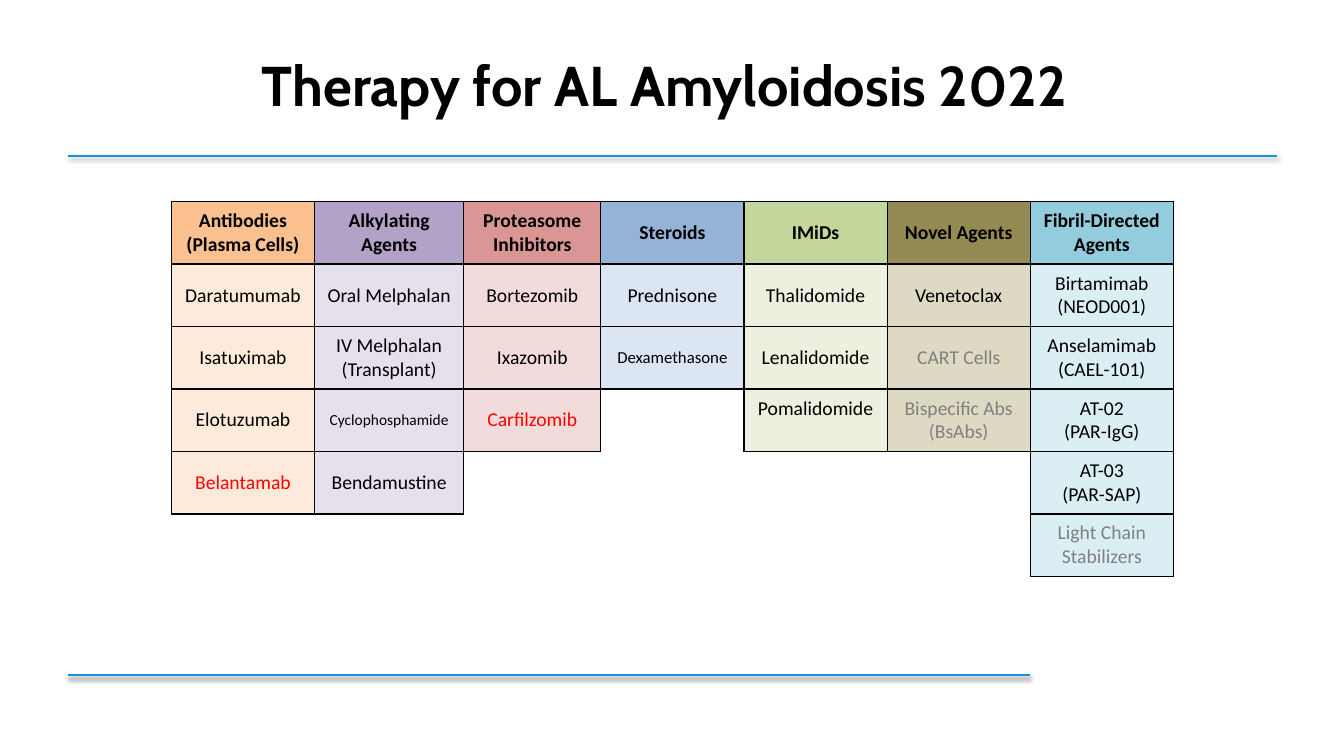
from lxml import etree
from pptx import Presentation
from pptx.dml.color import RGBColor
from pptx.enum.shapes import MSO_CONNECTOR
from pptx.enum.text import MSO_ANCHOR, PP_ALIGN
from pptx.oxml import parse_xml
from pptx.oxml.ns import nsdecls, qn
from pptx.util import Inches, Pt

STRAIGHT = MSO_CONNECTOR.STRAIGHT
MIDDLE, TOP = MSO_ANCHOR.MIDDLE, MSO_ANCHOR.TOP
CENTER = PP_ALIGN.CENTER

COLORS = {"black": "000000", "red": "FF0000", "grey": "808080", "rule": "1792DD"}
SLIDE_WIDTH, SLIDE_HEIGHT = 13.33, 7.5
RULE_LEFT = 0.67
TABLE_LEFT, TABLE_TOP = 1.7, 2
ROW_HEIGHT, ROW_COUNT = 0.62, 6

DRUG_CLASSES = [
    (1.42, "FAC090", "FDEADA", ["Antibodies (Plasma Cells)", "Daratumumab", "Isatuximab",
                                "Elotuzumab", "Belantamab"]),
    (1.48, "B3A2C7", "E6E0EC", ["Alkylating Agents", "Oral Melphalan", "IV Melphalan\n(Transplant)",
                                "Cyclophosphamide", "Bendamustine"]),
    (1.36, "D99694", "F2DCDB", ["Proteasome Inhibitors", "Bortezomib", "Ixazomib", "Carfilzomib"]),
    (1.42, "95B3D7", "DCE6F2", ["Steroids", "Prednisone", "Dexamethasone"]),
    (1.42, "C3D69B", "EBF1DE", ["IMiDs", "Thalidomide", "Lenalidomide", "Pomalidomide"]),
    (1.42, "948A54", "DDD9C3", ["Novel Agents", "Venetoclax", "CART Cells",
                                "Bispecific Abs\n(BsAbs)"]),
    (1.42, "93CDDD", "DBEEF4", ["Fibril-Directed Agents", "Birtamimab\n(NEOD001)",
                                "Anselamimab\n(CAEL-101)", "AT-02\n(PAR-IgG)",
                                "AT-03\n(PAR-SAP)", "Light Chain\nStabilizers"]),
]
TEXT_COLORS = {
    "Belantamab": "red",
    "Carfilzomib": "red",
    "CART Cells": "grey",
    "Bispecific Abs\n(BsAbs)": "grey",
    "Light Chain\nStabilizers": "grey",
}
TEXT_SIZES = {"Dexamethasone": 12, "Cyclophosphamide": 11}
EDGES = {"lnL": (0, -1), "lnR": (0, 1), "lnT": (-1, 0), "lnB": (1, 0)}


def format_text(text_frame, color, values):
    for paragraph in text_frame.paragraphs:
        paragraph.alignment = CENTER
        for run in paragraph.runs:
            for name, value in values.items():
                setattr(run.font, name, value)
            run.font.color.rgb = RGBColor.from_string(COLORS[color])


def has_text(row, column):
    return 0 <= column < len(DRUG_CLASSES) and 0 <= row < len(DRUG_CLASSES[column][3])


presentation = Presentation()
presentation.slide_width = Inches(SLIDE_WIDTH)
presentation.slide_height = Inches(SLIDE_HEIGHT)
slide = presentation.slides.add_slide(presentation.slide_layouts[5])

title = slide.shapes.title
for name, value in {"left": 1.7, "top": 0.46, "width": 9.78, "height": 0.74}.items():
    setattr(title, name, Inches(value))
title.text_frame.text = "Therapy for AL Amyloidosis 2022"
title.text_frame.vertical_anchor = MIDDLE
format_text(title.text_frame, "black", {"name": "Cabin", "size": Pt(40), "bold": True})

for rule_right, rule_top in [(12.67, 1.55), (10.22, 6.7)]:
    rule = slide.shapes.add_connector(
        STRAIGHT, Inches(RULE_LEFT), Inches(rule_top), Inches(rule_right), Inches(rule_top))
    rule.line.color.rgb = RGBColor.from_string(COLORS["rule"])
    rule.line.width = Pt(1.5)
    rule._element.spPr.append(parse_xml(
        f'<a:effectLst {nsdecls("a")}>'
        '<a:outerShdw blurRad="40000" dist="20000" dir="5400000" rotWithShape="0">'
        f'<a:srgbClr val="{COLORS["black"]}"><a:alpha val="38000"/></a:srgbClr>'
        '</a:outerShdw></a:effectLst>'))

table_width = sum(drug_class[0] for drug_class in DRUG_CLASSES)
table = slide.shapes.add_table(
    ROW_COUNT, len(DRUG_CLASSES), Inches(TABLE_LEFT), Inches(TABLE_TOP),
    Inches(table_width), Inches(ROW_HEIGHT * ROW_COUNT)).table
table.first_row = False
table.horz_banding = False
for table_row in table.rows:
    table_row.height = Inches(ROW_HEIGHT)

for column, (width, header_fill, drug_fill, labels) in enumerate(DRUG_CLASSES):
    table.columns[column].width = Inches(width)
    for row in range(ROW_COUNT):
        cell = table.cell(row, column)
        if has_text(row, column):
            label = labels[row]
            cell.text = label
            cell.vertical_anchor = MIDDLE
            cell.fill.solid()
            cell.fill.fore_color.rgb = RGBColor.from_string(drug_fill if row else header_fill)
            format_text(cell.text_frame, TEXT_COLORS.get(label, "black"), {
                "name": "Calibri", "size": Pt(TEXT_SIZES.get(label, 14)), "bold": row == 0})
            if label == "Pomalidomide":
                cell.vertical_anchor = TOP
                cell.margin_top = Inches(0.08)
        else:
            cell.fill.background()
        properties = cell._tc.get_or_add_tcPr()
        for position, (edge, (down, across)) in enumerate(EDGES.items()):
            border = etree.Element(qn(f"a:{edge}"), w=str(Pt(1)))
            if has_text(row, column) or has_text(row + down, column + across):
                border_fill = etree.SubElement(border, qn("a:solidFill"))
                etree.SubElement(border_fill, qn("a:srgbClr"), val=COLORS["black"])
            else:
                etree.SubElement(border, qn("a:noFill"))
            properties.insert(position, border)

presentation.save("out.pptx")
